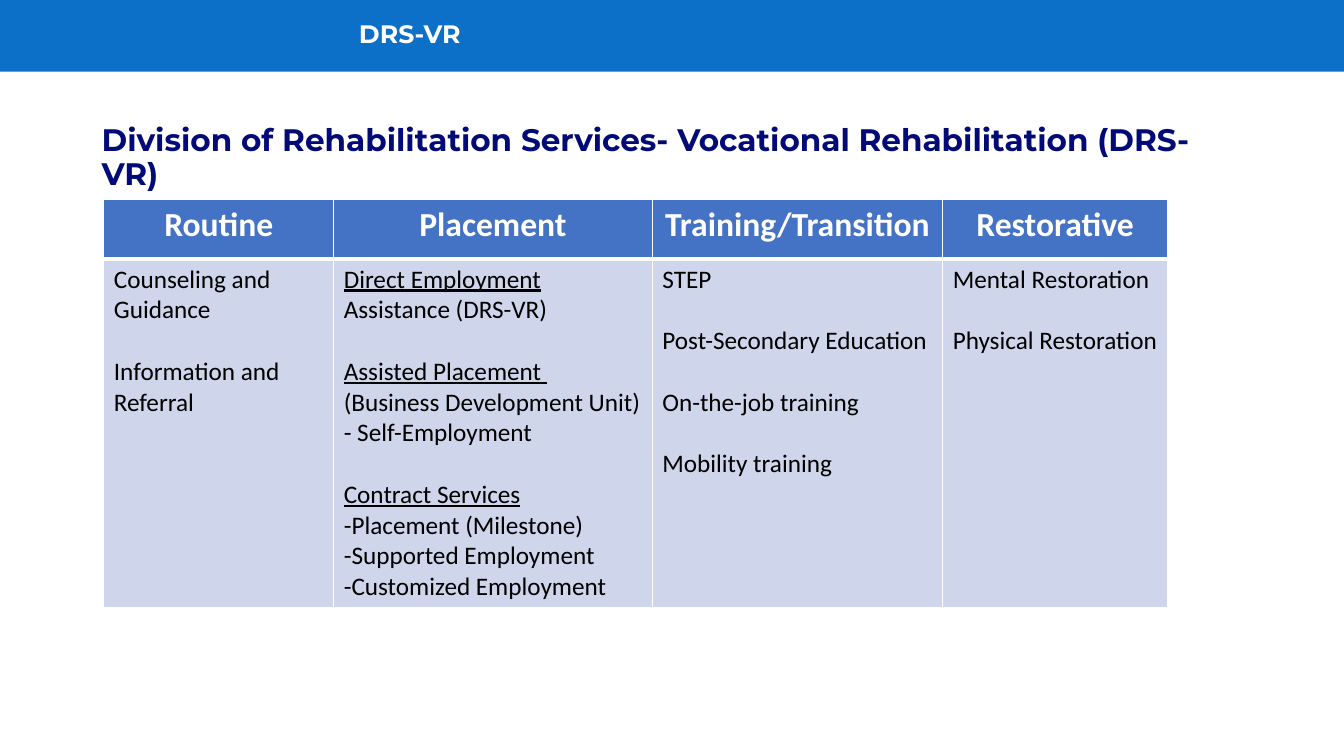
from lxml import etree
from pptx import Presentation
from pptx.dml.color import RGBColor
from pptx.enum.shapes import MSO_SHAPE
from pptx.enum.text import MSO_ANCHOR, MSO_AUTO_SIZE, PP_ALIGN
from pptx.oxml.ns import qn
from pptx.util import Inches, Pt

RECTANGLE = MSO_SHAPE.RECTANGLE
MIDDLE = MSO_ANCHOR.MIDDLE
NO_AUTOFIT = MSO_AUTO_SIZE.NONE
LEFT, CENTER = PP_ALIGN.LEFT, PP_ALIGN.CENTER

WHITE = RGBColor(0xFF, 0xFF, 0xFF)
BLACK = RGBColor(0x00, 0x00, 0x00)
BAR_BLUE = RGBColor(0x0C, 0x70, 0xC8)
NAVY = RGBColor(0x02, 0x0A, 0x78)
HEADER_BLUE = RGBColor(0x44, 0x72, 0xC4)
PALE_BLUE = RGBColor(0xCF, 0xD5, 0xEA)

HEADING_FONT, TABLE_FONT = "Montserrat", "Calibri"
GROUP_GAP = Pt(22)

# Each column: heading, width, groups of lines; a line is (underlined, plain)
SERVICES = [
    ("Routine", 2.28, [
        [("", "Counseling and Guidance")],
        [("", "Information and Referral")],
    ]),
    ("Placement", 3.16, [
        [("Direct Employment", " Assistance (DRS-VR)")],
        [("Assisted Placement\u00a0", ""),
         ("", "(Business Development Unit)"),
         ("", "- Self-Employment")],
        [("Contract Services", ""),
         ("", "-Placement (Milestone)"),
         ("", "-Supported Employment"),
         ("", "-Customized Employment")],
    ]),
    ("Training/Transition", 2.88, [
        [("", "STEP")],
        [("", "Post-Secondary Education")],
        [("", "On-the-job training")],
        [("", "Mobility training")],
    ]),
    ("Restorative", 2.23, [
        [("", "Mental Restoration")],
        [("", "Physical Restoration")],
    ]),
]


def format_font(font, name, size, color, bold):
    font.name = name
    font.size = Pt(size)
    font.color.rgb = color
    font.bold = bold


def add_bar(slide, width):
    bar = slide.shapes.add_shape(RECTANGLE, 0, 0, width, Inches(0.71))
    bar.shadow.inherit = False
    bar.fill.solid()
    bar.fill.fore_color.rgb = BAR_BLUE
    bar.line.fill.background()


def set_heading(shape, text, size, color, alignment):
    frame = shape.text_frame
    frame.text = text
    frame.word_wrap = True
    frame.auto_size = NO_AUTOFIT
    paragraph = frame.paragraphs[0]
    paragraph.alignment = alignment
    paragraph.line_spacing = 0.9
    format_font(paragraph.runs[0].font, HEADING_FONT, size, color, True)


def set_title(slide):
    title = slide.shapes.title
    title.left, title.top = Inches(0.29), Inches(0.16)
    title.width, title.height = Inches(7.55), Inches(0.38)
    set_heading(title, "DRS-VR", 18, WHITE, CENTER)
    title.text_frame.vertical_anchor = MIDDLE
    # Bring the title in front of the bar
    title.element.getparent().append(title.element)


def add_subtitle(slide):
    box = slide.shapes.add_textbox(Inches(0.91), Inches(1.19), Inches(11.48), Inches(0.51))
    set_heading(box, "Division of Rehabilitation Services- Vocational Rehabilitation (DRS-VR)",
                22.2, NAVY, LEFT)


def style_cell(cell, color, bottom_width):
    cell.fill.solid()
    cell.fill.fore_color.rgb = color
    properties = cell._tc.get_or_add_tcPr()
    # Borders come before the fill
    widths = {"a:lnL": 1, "a:lnR": 1, "a:lnT": 1, "a:lnB": bottom_width}
    for index, (tag, width) in enumerate(widths.items()):
        border = etree.Element(qn(tag), w=str(Pt(width)))
        fill = etree.SubElement(border, qn("a:solidFill"))
        etree.SubElement(fill, qn("a:srgbClr"), val=str(WHITE))
        properties.insert(index, border)


def fill_header(cell, text):
    style_cell(cell, HEADER_BLUE, 3)
    cell.text_frame.text = text
    paragraph = cell.text_frame.paragraphs[0]
    paragraph.alignment = CENTER
    format_font(paragraph.runs[0].font, TABLE_FONT, 24, WHITE, True)


def fill_body(cell, groups):
    style_cell(cell, PALE_BLUE, 1)
    frame = cell.text_frame
    paragraph = None
    for group in groups:
        for line_number, line in enumerate(group):
            is_first = paragraph is None
            paragraph = frame.paragraphs[0] if is_first else frame.add_paragraph()
            if line_number == 0 and not is_first:
                paragraph.space_before = GROUP_GAP
            for text, underlined in zip(line, (True, False)):
                if text:
                    run = paragraph.add_run()
                    run.text = text
                    format_font(run.font, TABLE_FONT, 18, BLACK, False)
                    run.font.underline = underlined


def add_services_table(slide):
    total_width = sum(width for _, width, _ in SERVICES)
    table = slide.shapes.add_table(2, len(SERVICES), Inches(1.03), Inches(1.98),
                                   Inches(total_width), Inches(3.99)).table
    table.rows[0].height, table.rows[1].height = Inches(0.59), Inches(3.4)
    for column, (heading, width, groups) in enumerate(SERVICES):
        table.columns[column].width = Inches(width)
        fill_header(table.cell(0, column), heading)
        fill_body(table.cell(1, column), groups)


def main():
    presentation = Presentation()
    presentation.slide_width = Inches(13.33)
    presentation.slide_height = Inches(7.5)
    title_only = presentation.slide_layouts[5]
    slide = presentation.slides.add_slide(title_only)

    # Top band
    add_bar(slide, presentation.slide_width)
    set_title(slide)

    # Content
    add_subtitle(slide)
    add_services_table(slide)
    presentation.save("out.pptx")


if __name__ == "__main__":
    main()
